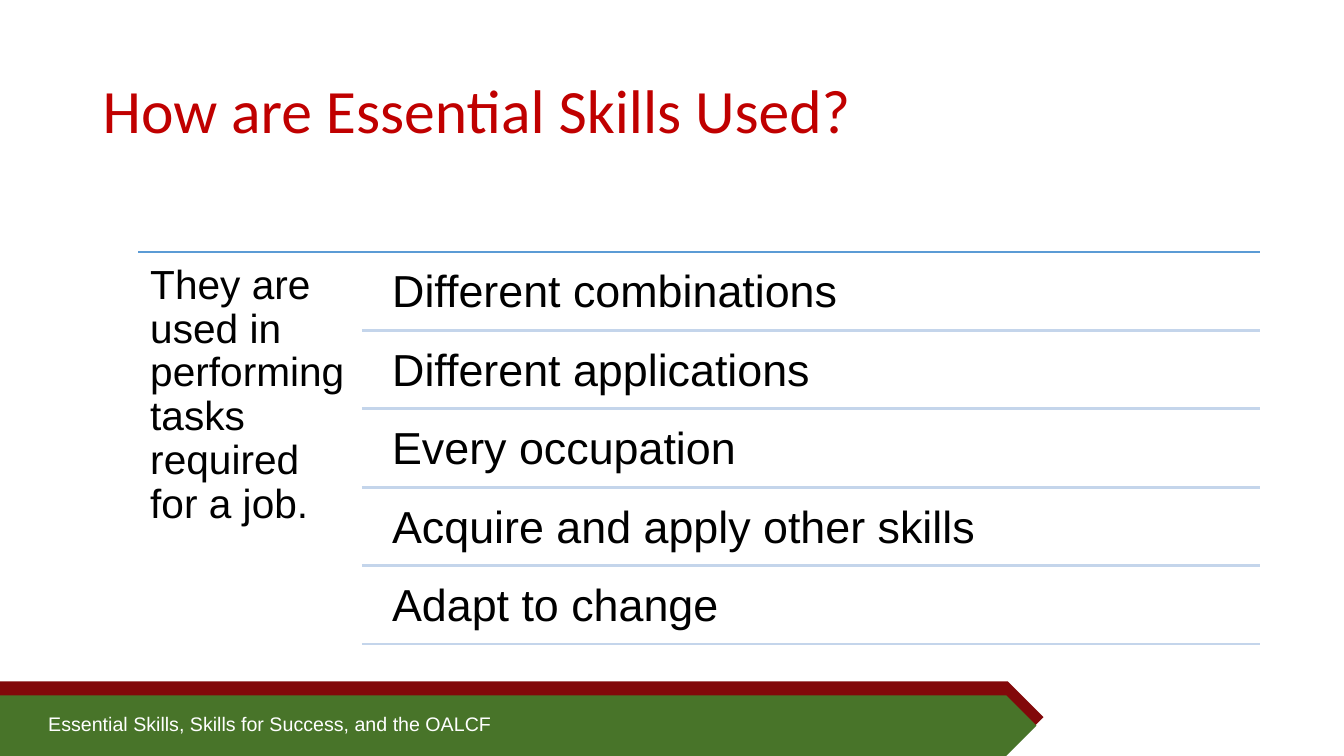
from lxml.etree import SubElement
from pptx import Presentation
from pptx.dml.color import RGBColor
from pptx.enum.shapes import MSO_CONNECTOR, MSO_SHAPE
from pptx.enum.text import MSO_ANCHOR
from pptx.oxml.ns import qn
from pptx.util import Inches, Pt

# Content
TITLE = "How are Essential Skills Used?"
LEAD = "They are used in performing tasks required for a job."
USES = [
    "Different combinations",
    "Different applications",
    "Every occupation",
    "Acquire and apply other skills",
    "Adapt to change",
]
FOOTER = "Essential Skills, Skills for Success, and the OALCF"

THEME = {
    "title": {"size": Pt(44), "name": "Calibri", "color": "C00000"},
    "lead": {"size": Pt(29), "name": "Arial", "color": "000000"},
    "use": {"size": Pt(32), "name": "Arial", "color": "000000"},
    "footer": {"size": Pt(14), "name": "Arial", "color": "FFFFFF"},
    "top_rule": "5B9BD5",
    "row_rule": "C4D5EB",
    "red_band": "82080A",
    "green_band": "487429",
}

# Grid, in inches
WIDTH, HEIGHT = 13.33, 7.5
LEFT, RULE_LEFT, USE_LEFT, RIGHT = 1.37, 3.59, 3.76, 12.5
TOP, BOTTOM = 2.5, 6.39
ROW = (BOTTOM - TOP) / len(USES)
GAP = 0.04

prs = Presentation()
prs.slide_width, prs.slide_height = Inches(WIDTH), Inches(HEIGHT)
s = prs.slides.add_slide(prs.slide_layouts[6])


def add_text(text, style, box, inset=None, spacing=None, anchor=MSO_ANCHOR.TOP):
    tf = s.shapes.add_textbox(*map(Inches, box)).text_frame
    tf.word_wrap = True
    tf.vertical_anchor = anchor
    if inset:
        for side in ("left", "top", "right", "bottom"):
            setattr(tf, f"margin_{side}", Inches(inset))
    p = tf.paragraphs[0]
    p.line_spacing = spacing
    r = p.add_run()
    r.text = text
    for key, value in THEME[style].items():
        if key == "color":
            r.font.color.rgb = RGBColor.from_string(value)
        else:
            setattr(r.font, key, value)


def add_rule(left, y, color):
    line = s.shapes.add_connector(
        MSO_CONNECTOR.STRAIGHT, Inches(left), Inches(y), Inches(RIGHT), Inches(y))
    line.line.color.rgb = RGBColor.from_string(THEME[color])
    line.line.width = Pt(2)
    SubElement(line._element.spPr, qn("a:effectLst"))


def add_band(box, color):
    sp = s.shapes.add_shape(MSO_SHAPE.PENTAGON, *map(Inches, box))
    sp.shadow.inherit = False
    sp.fill.solid()
    sp.fill.fore_color.rgb = RGBColor.from_string(THEME[color])
    sp.line.fill.background()


# Footer bands
add_band((0, 6.76, 10.35, 0.71), "red_band")
add_band((0, 6.9, 10.28, 0.6), "green_band")
add_text(FOOTER, "footer", (0.38, 7.01, 9.37, 0.34))

# Title
add_text(TITLE, "title", (0.92, 0.4, 11.5, 1.45), spacing=0.9, anchor=MSO_ANCHOR.MIDDLE)

# Lead statement beside the ruled list
add_rule(LEFT, TOP, "top_rule")
add_text(LEAD, "lead", (LEFT, TOP, RULE_LEFT - LEFT, BOTTOM - TOP), 0.12, 0.9)
for i, use in enumerate(USES):
    y = TOP + i * ROW
    add_text(use, "use", (USE_LEFT, y + GAP, RIGHT - USE_LEFT, ROW - GAP), 0.13, 0.9)
    add_rule(RULE_LEFT, y + ROW, "row_rule")

prs.save("out.pptx")
